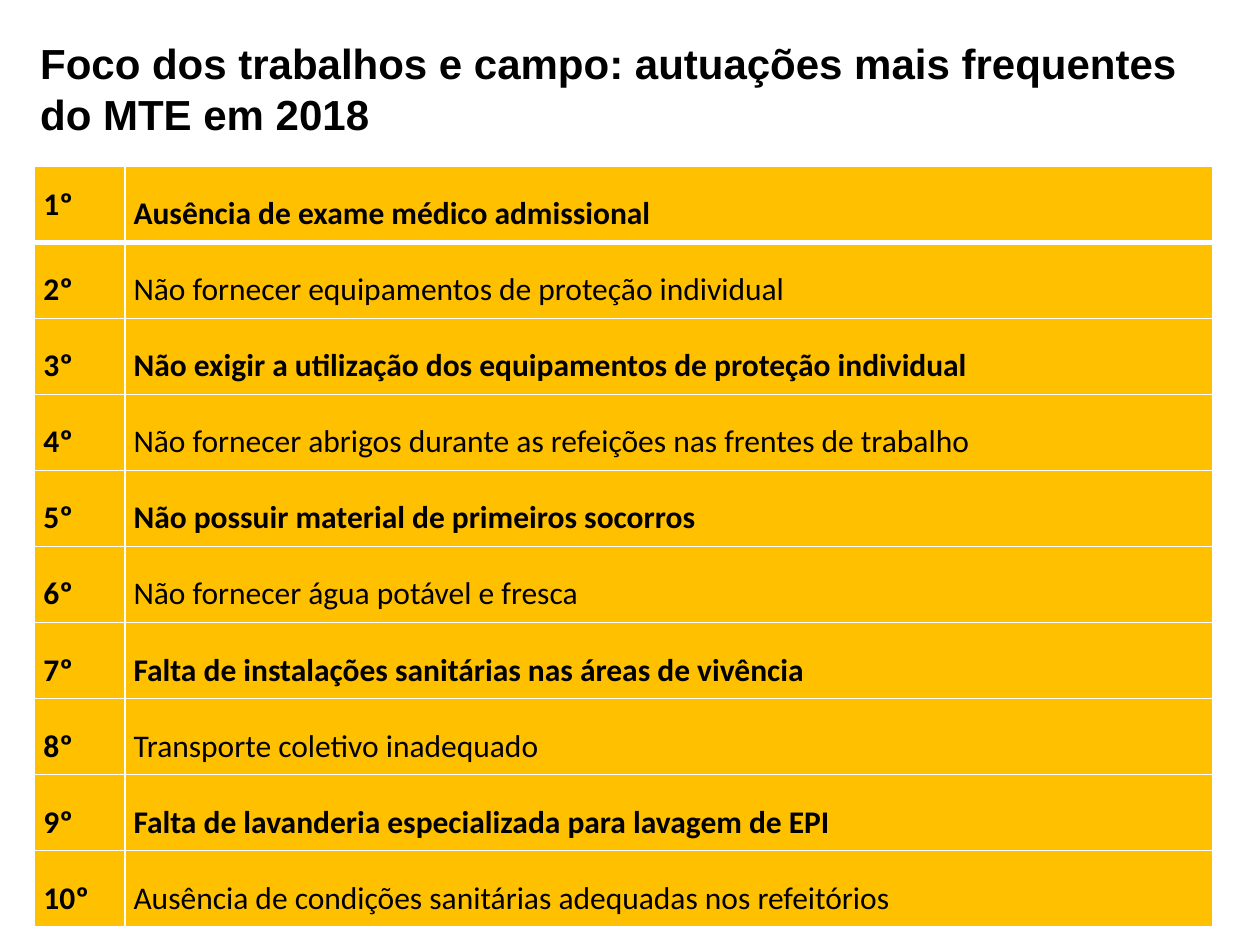
from dataclasses import dataclass

from lxml.etree import SubElement
from pptx import Presentation
from pptx.dml.color import RGBColor
from pptx.enum.text import MSO_ANCHOR
from pptx.oxml.ns import qn
from pptx.util import Inches, Pt


@dataclass(frozen=True)
class Theme:
    ink: str = "000000"
    gold: str = "FFC000"
    rule: str = "FFFFFF"
    head: str = "Arial"
    body: str = "Calibri"
    large: int = 24
    small: int = 18
    thin: int = 1
    thick: int = 3


THEME = Theme()
WIDE, HIGH = Inches(10), Inches(7.5)
TITLE = "Foco dos trabalhos e campo: autuações mais frequentes do MTE em 2018"
FAULTS = [
    "Ausência de exame médico admissional",
    "Não fornecer equipamentos de proteção individual",
    "Não exigir a utilização dos equipamentos de proteção individual",
    "Não fornecer abrigos durante as refeições nas frentes de trabalho",
    "Não possuir material de primeiros socorros",
    "Não fornecer água potável e fresca",
    "Falta de instalações sanitárias nas áreas de vivência",
    "Transporte coletivo inadequado",
    "Falta de lavanderia especializada para lavagem de EPI",
    "Ausência de condições sanitárias adequadas nos refeitórios",
]


def add_run(para, text, face, size, bold):
    run = para.add_run()
    run.text = text
    font = run.font
    font.name, font.size, font.bold = face, Pt(size), bold
    font.color.rgb = RGBColor.from_string(THEME.ink)


def add_title(slide):
    box = slide.shapes.add_textbox(
        int(WIDE * 0.022), int(HIGH * 0.027), int(WIDE * 0.942), int(HIGH * 0.133))
    frame = box.text_frame
    frame.word_wrap = True
    frame.vertical_anchor = MSO_ANCHOR.MIDDLE
    add_run(frame.paragraphs[0], TITLE, THEME.head, THEME.large, True)


def rule_cell(cell, top, base):
    props = cell._tc.get_or_add_tcPr()
    widths = {"L": THEME.thin, "R": THEME.thin, "T": top, "B": base}
    for side, width in widths.items():
        line = SubElement(props, qn(f"a:ln{side}"), w=str(Pt(width)))
        fill = SubElement(line, qn("a:solidFill"))
        SubElement(fill, qn("a:srgbClr"), val=THEME.rule)


def fill_cell(cell, text, bold, row, space):
    rule_cell(cell, THEME.thick if row == 1 else THEME.thin,
              THEME.thick if row == 0 else THEME.thin)
    cell.fill.solid()
    cell.fill.fore_color.rgb = RGBColor.from_string(THEME.gold)
    cell.vertical_anchor = MSO_ANCHOR.MIDDLE
    cell.margin_left = cell.margin_right = Inches(0.07)
    cell.margin_top = cell.margin_bottom = 0
    para = cell.text_frame.paragraphs[0]
    para.line_spacing = space
    add_run(para, text, THEME.body, THEME.small, bold)


def add_ranks(slide):
    wide, high = int(WIDE * 0.935), int(HIGH * 0.805)
    table = slide.shapes.add_table(
        len(FAULTS), 2, int(WIDE * 0.0275), int(HIGH * 0.176), wide, high).table
    first = int(WIDE * 0.0715)
    table.columns[0].width = first
    table.columns[1].width = wide - first
    for row, fault in enumerate(FAULTS):
        fill_cell(table.cell(row, 0), f"{row + 1}º", True, row, 1.5 if row else 1.0)
        fill_cell(table.cell(row, 1), fault, row % 2 == 0, row, 1.5)


def main():
    deck = Presentation()
    deck.slide_width, deck.slide_height = WIDE, HIGH
    slide = deck.slides.add_slide(deck.slide_layouts[6])
    add_ranks(slide)
    add_title(slide)
    deck.save("out.pptx")


if __name__ == "__main__":
    main()
